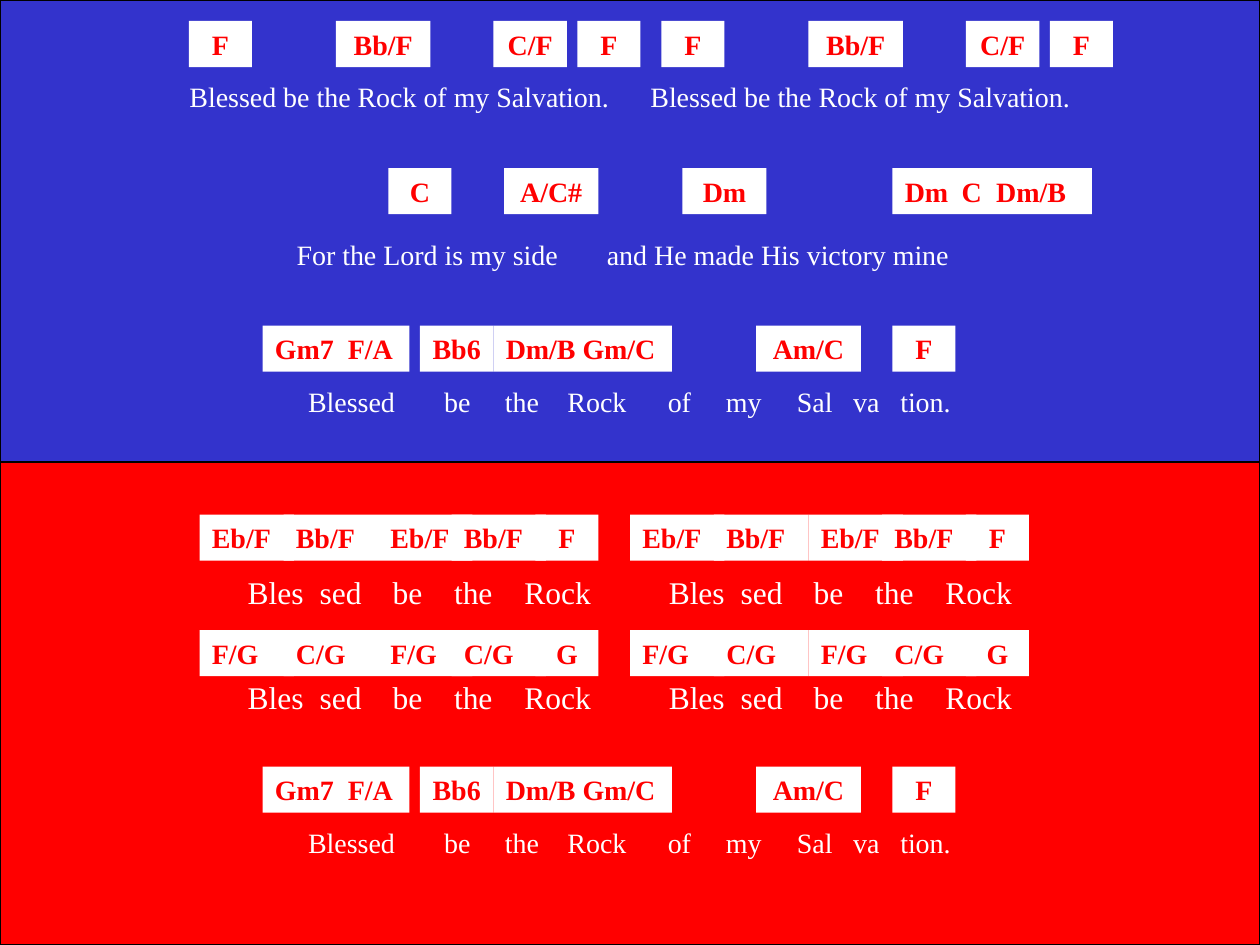
from lxml import etree
from pptx import Presentation
from pptx import util as u
from pptx.dml.color import RGBColor
from pptx.enum import shapes, text
from pptx.oxml.ns import qn

# Grid: 12 cells to the inch, 120 columns by 90 rows
CELL = u.Inches(1) // 12
COLUMNS, ROWS = 120, 90
PANEL_ROWS = 46
INSET = 1.2
COLORS = {"verse": "3333CC", "chorus": "FF0000", "outline": "000000",
          "chord": "FF0000", "label": "FFFFFF", "lyric": "FFFFFF"}
LEFT, CENTER = text.PP_ALIGN.LEFT, text.PP_ALIGN.CENTER
CHORD_FONT = {"name": "Times New Roman", "size": u.Pt(16), "bold": True}
LYRIC_FONT = {"name": "Times New Roman", "size": u.Pt(16), "bold": False}
LARGE_FONT = {**LYRIC_FONT, "size": u.Pt(18)}


def cells(count):
    return u.Emu(round(count * CELL))


def color(name):
    return RGBColor.from_string(COLORS[name])


def repeat(items, *starts):
    """Shift a group of items, each led by its column, to each start."""
    return [(start + column, *rest) for start in starts for column, *rest in items]


def write(shape, words, font, font_color, align, margin_left=INSET):
    """Write (column, word) pairs, aligned by tab stops from the first word."""
    frame = shape.text_frame
    frame_format = {"word_wrap": True, "auto_size": text.MSO_AUTO_SIZE.SHAPE_TO_FIT_TEXT,
                    "vertical_anchor": text.MSO_ANCHOR.TOP,
                    "margin_left": cells(margin_left)}
    for name, value in frame_format.items():
        setattr(frame, name, value)
    paragraph = frame.paragraphs[0]
    paragraph.alignment = align
    run = paragraph.add_run()
    run.text = "\t".join(word for _, word in words)
    for name, value in font.items():
        setattr(run.font, name, value)
    run.font.color.rgb = color(font_color)
    if len(words) > 1:
        stops = etree.SubElement(paragraph._p.get_or_add_pPr(), qn("a:tabLst"))
        for column, _ in words[1:]:
            etree.SubElement(stops, qn("a:tab"), algn="l",
                             pos=str(cells(column - words[0][0])))


def add_box(slide, left, top, width, height, fill):
    shape = slide.shapes.add_shape(shapes.MSO_SHAPE.RECTANGLE, *map(cells, (left, top, width, height)))
    shape.shadow.inherit = False
    shape.fill.solid()
    shape.fill.fore_color.rgb = color(fill)
    return shape


def add_chords(slide, left, top, chords):
    for column, width, label, *more in chords:
        shape = add_box(slide, left + column, top, width, 4.4, "label")
        shape.line.fill.background()
        # A label of several words, or one marked LEFT, starts at the left
        words = [(0, label)] + [item for item in more if item != LEFT]
        write(shape, words, CHORD_FONT, "chord", LEFT if more else CENTER)


def add_lyric(slide, left, top, width, words, font):
    height = 4.8 if font is LARGE_FONT else 4.4
    shape = slide.shapes.add_textbox(*map(cells, (left, top, width, height)))
    write(shape, words, font, "lyric", LEFT, margin_left=words[0][0])


def add_panel(slide, box, fill, lines):
    """Draw one panel; each line gives chord row, chords, lyric row, words, font."""
    left, top, width, _ = box
    panel = add_box(slide, *box, fill)
    panel.line.color.rgb = color("outline")
    panel.line.width = u.Pt(0.75)
    for chord_row, chords, lyric_row, words, font in lines:
        add_lyric(slide, left, top + lyric_row, width, words, font)
        add_chords(slide, left, top + chord_row, chords)


def rock_chords(first, second, last):
    group = [(0, 9, first, LEFT), (8, 9, second, LEFT), (17, 9, first, LEFT),
             (24, 9, second, LEFT), (32, 6, last)]
    return repeat(group, 19, 60)


# Verse lines
OPENING_CHORDS = repeat([(0, 6, "F"), (14, 9, "Bb/F"), (29, 7, "C/F"), (37, 6, "F")], 18, 63)
OPENING_WORDS = repeat([(0, "Blessed be the Rock of my Salvation.")], 18.05, 61.95)
LORD_CHORDS = [(37, 6, "C"), (48, 9, "A/C#"), (65, 8, "Dm"),
               (85, 19, "Dm", (5.4, "C"), (8.7, "Dm/B"))]
LORD_WORDS = [(28.25, "For the Lord is my side"), (57.8, "and He made His victory mine")]

# Closing line, shared by both panels
CLOSING_CHORDS = [(25, 14, "Gm7", (6.95, "F/A")), (40, 7, "Bb6"),
                  (47, 17, "Dm/B Gm/C", LEFT), (72, 10, "Am/C"), (85, 6, "F")]
CLOSING_WORDS = [(29.35, "Blessed"), (42.3, "be"), (48.1, "the"), (54.05, "Rock"),
                 (63.6, "of"), (69.15, "my"), (75.9, "Sal"), (81.25, "va"), (85.75, "tion.")]

# Chorus words
ROCK_WORDS = repeat([(0, "Bles"), (6.85, "sed"), (13.8, "be"), (19.65, "the"),
                     (26.35, "Rock")], 23.6, 63.7)

VERSE = [(2, OPENING_CHORDS, 7, OPENING_WORDS, LYRIC_FONT),
         (16, LORD_CHORDS, 22, LORD_WORDS, LYRIC_FONT),
         (31, CLOSING_CHORDS, 36, CLOSING_WORDS, LYRIC_FONT)]
CHORUS = [(5, rock_chords("Eb/F", "Bb/F", "F"), 10, ROCK_WORDS, LARGE_FONT),
          (16, rock_chords("F/G", "C/G", "G"), 20, ROCK_WORDS, LARGE_FONT),
          (29, CLOSING_CHORDS, 34, CLOSING_WORDS, LYRIC_FONT)]


def main():
    presentation = Presentation()
    presentation.slide_width = cells(COLUMNS)
    presentation.slide_height = cells(ROWS)
    slide = presentation.slides.add_slide(presentation.slide_layouts[6])
    add_panel(slide, (0, 0, COLUMNS, PANEL_ROWS), "verse", VERSE)
    add_panel(slide, (0, ROWS - PANEL_ROWS, COLUMNS, PANEL_ROWS), "chorus", CHORUS)
    presentation.save("out.pptx")


if __name__ == "__main__":
    main()
